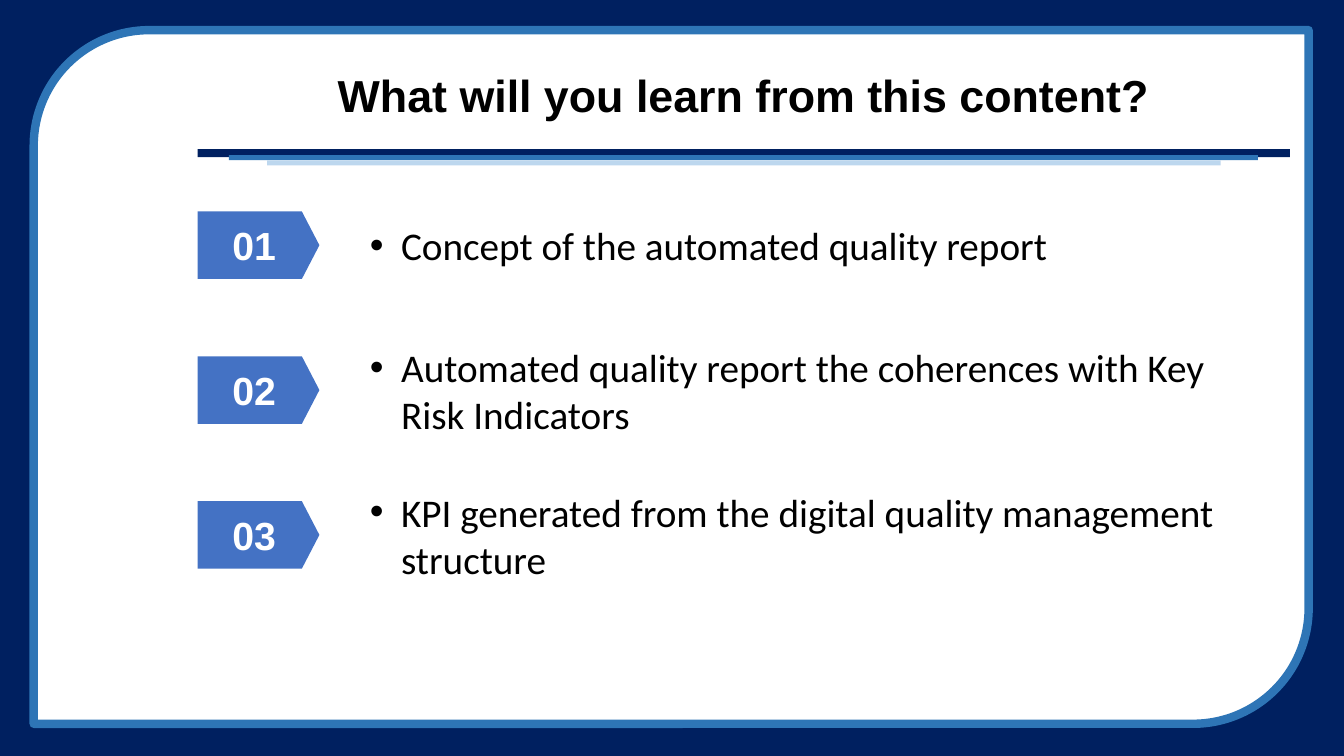
import pptx
import pptx.dml.color
import pptx.enum.shapes
import pptx.enum.text
import pptx.oxml.ns
import pptx.util
from lxml import etree
from pptx.util import Cm, Pt

TITLE = "What will you learn from this content?"
TOPICS = [
    "Concept of the automated quality report",
    "Automated quality report the coherences with Key Risk Indicators",
    "KPI generated from the digital quality management structure",
]
NAVY, BLUE, PALE, TAG_BLUE = "002060", "2E75B6", "BDD7EE", "4472C4"
# left, top, width, height in cm
TITLE_RULES = [
    ((4.98, 3.76, 27.53, 0.2), NAVY),
    ((5.77, 3.91, 25.93, 0.13), BLUE),
    ((6.73, 4.04, 24.03, 0.13), PALE),
]
TITLE_FORMAT = {"size": Pt(32), "name": "Arial", "bold": True}
NUMBER_FORMAT = {"size": Pt(28), "name": "Arial", "bold": True}
TOPIC_FORMAT = {"size": Pt(28), "name": "Calibri", "bold": False}

FIRST_CENTRE, ROW_PITCH = 6.18, 3.65
TAG_HEIGHT, TOPIC_HEIGHT = 1.7, 2.64

SHAPES = pptx.enum.shapes.MSO_SHAPE
ALIGN = pptx.enum.text.PP_ALIGN
MIDDLE = pptx.enum.text.MSO_ANCHOR.MIDDLE


def set_fill(fill, color):
    fill.solid()
    fill.fore_color.rgb = pptx.dml.color.RGBColor.from_string(color)


def add_shape(slide, kind, box, color):
    shape = slide.shapes.add_shape(kind, *map(Cm, box))
    shape.shadow.inherit = False
    set_fill(shape.fill, color)
    shape.line.fill.background()
    return shape


def write_text(shape, text, font_format, color, alignment):
    """Write one vertically centred paragraph and return it."""
    frame = shape.text_frame
    frame.word_wrap = True
    frame.vertical_anchor = MIDDLE
    paragraph = frame.paragraphs[0]
    paragraph.alignment = alignment
    run = paragraph.add_run()
    run.text = text
    for name, value in font_format.items():
        setattr(run.font, name, value)
    set_fill(run.font.fill, color)
    return paragraph


def add_bullet(paragraph):
    properties = paragraph._p.get_or_add_pPr()
    properties.set("marL", str(Cm(0.79)))
    properties.set("indent", str(-Cm(0.79)))
    for tag, name, value in (("a:buFont", "typeface", "Arial"), ("a:buChar", "char", "•")):
        etree.SubElement(properties, pptx.oxml.ns.qn(tag)).set(name, value)


def add_topic(slide, index, topic):
    centre = FIRST_CENTRE + index * ROW_PITCH
    tag_box = (4.98, centre - TAG_HEIGHT / 2, 3.07, TAG_HEIGHT)
    tag = add_shape(slide, SHAPES.PENTAGON, tag_box, TAG_BLUE)
    tag.adjustments[0] = 0.26
    write_text(tag, f"{index + 1:02}", NUMBER_FORMAT, "FFFFFF", ALIGN.CENTER)

    topic_box = (9.07, centre - TOPIC_HEIGHT / 2, 22.71, TOPIC_HEIGHT)
    textbox = slide.shapes.add_textbox(*map(Cm, topic_box))
    add_bullet(write_text(textbox, topic, TOPIC_FORMAT, "000000", ALIGN.LEFT))


def main():
    presentation = pptx.Presentation()
    presentation.slide_width, presentation.slide_height = Cm(33.87), Cm(19.05)
    slide = presentation.slides.add_slide(presentation.slide_layouts[5])
    set_fill(slide.background.fill, NAVY)

    frame = add_shape(slide, SHAPES.ROUND_2_DIAG_RECTANGLE, (0.85, 0.76, 32.13, 17.48), "FFFFFF")
    set_fill(frame.line.fill, BLUE)
    frame.line.width = Pt(6)
    for box, color in TITLE_RULES:
        add_shape(slide, SHAPES.RECTANGLE, box, color)

    title = slide.shapes.title
    title.left, title.top, title.width, title.height = map(Cm, (4.98, 1.24, 27.53, 2.46))
    write_text(title, TITLE, TITLE_FORMAT, "000000", ALIGN.CENTER).line_spacing = 0.9
    slide.shapes._spTree.append(title._element)  # bring the title in front of the frame

    for index, topic in enumerate(TOPICS):
        add_topic(slide, index, topic)
    presentation.save("out.pptx")


if __name__ == "__main__":
    main()
